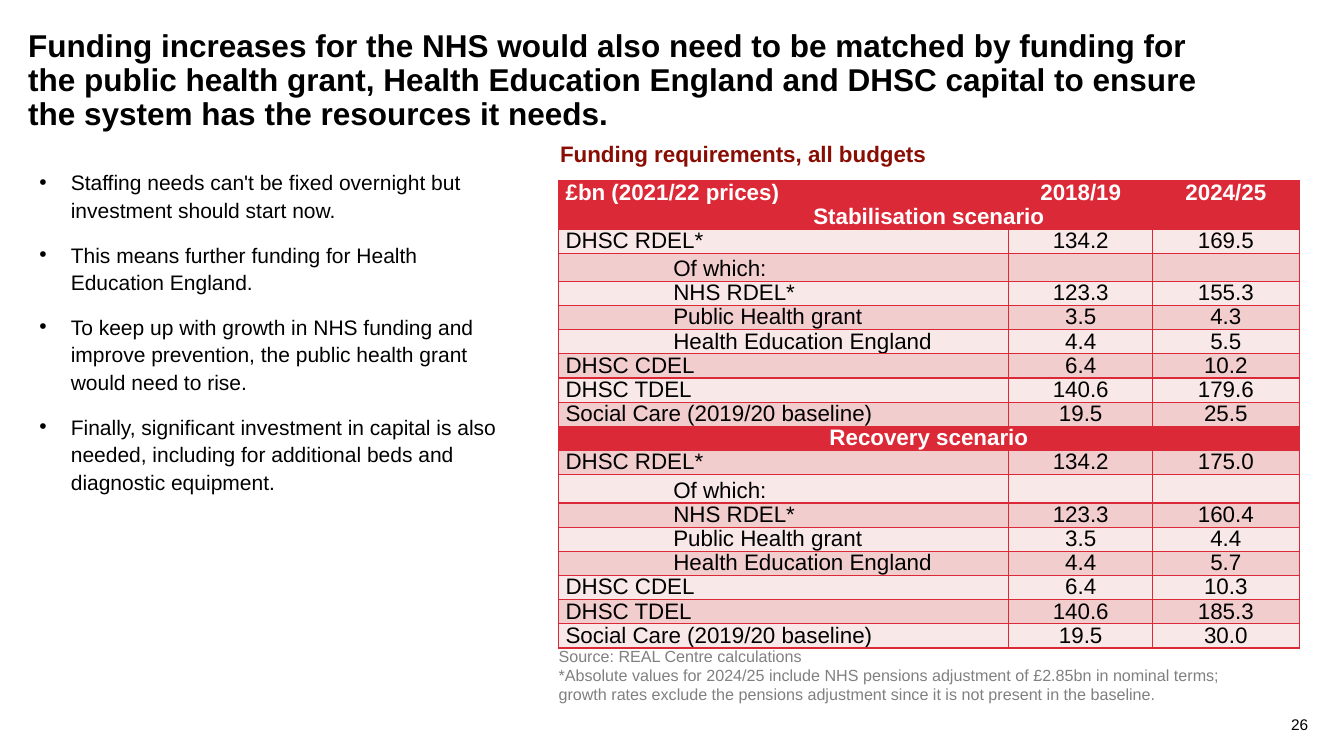
from lxml import etree
from pptx import Presentation
from pptx.dml.color import RGBColor
from pptx.enum.text import MSO_ANCHOR, MSO_AUTO_SIZE, PP_ALIGN
from pptx.oxml.ns import qn
from pptx.util import Pt

LEFT, CENTER, RIGHT = PP_ALIGN.LEFT, PP_ALIGN.CENTER, PP_ALIGN.RIGHT
TOP, BOTTOM = MSO_ANCHOR.TOP, MSO_ANCHOR.BOTTOM
NO_FIT = MSO_AUTO_SIZE.NONE

BLACK = RGBColor(0x00, 0x00, 0x00)
WHITE = RGBColor(0xFF, 0xFF, 0xFF)
RED = RGBColor(0xDC, 0x29, 0x37)
DARK_RED = RGBColor(0x89, 0x0D, 0x03)
LIGHT_PINK = RGBColor(0xF9, 0xE8, 0xE8)
PINK = RGBColor(0xF2, 0xCD, 0xCE)
GREY = RGBColor(0x80, 0x80, 0x80)

TITLE = ("Funding increases for the NHS would also need to be matched by funding for "
         "the public health grant, Health Education England and DHSC capital to ensure "
         "the system has the resources it needs.")
POINTS = [
    "Staffing needs can't be fixed overnight but investment should start now.",
    "This means further funding for Health Education England.",
    "To keep up with growth in NHS funding and improve prevention, the public health "
    "grant would need to rise.",
    "Finally, significant investment in capital is also needed, including for "
    "additional beds and diagnostic equipment.",
]
NOTES = [
    "Source: REAL Centre calculations",
    "*Absolute values for 2024/25 include NHS pensions adjustment of £2.85bn in nominal "
    "terms; growth rates exclude the pensions adjustment since it is not present in the "
    "baseline.",
]
HEADER = ("£bn (2021/22 prices)", "2018/19", "2024/25")
BUDGETS = [
    ("DHSC RDEL*", "134.2"),
    ("Of which:", ""),
    ("NHS RDEL*", "123.3"),
    ("Public Health grant", "3.5"),
    ("Health Education England", "4.4"),
    ("DHSC CDEL", "6.4"),
    ("DHSC TDEL", "140.6"),
    ("Social Care (2019/20 baseline)", "19.5"),
]
SUB_BUDGETS = {"Of which:", "NHS RDEL*", "Public Health grant", "Health Education England"}
SCENARIOS = {
    "Stabilisation scenario": ["169.5", "", "155.3", "4.3", "5.5", "10.2", "179.6", "25.5"],
    "Recovery scenario": ["175.0", "", "160.4", "4.4", "5.7", "10.3", "185.3", "30.0"],
}


def write(tf, lines, size=16, color=BLACK, bold=False, align=LEFT, spacing=None,
          after=0, indent=0, bullet=False):
    for i, line in enumerate(lines):
        p = tf.paragraphs[0] if i == 0 else tf.add_paragraph()
        p.alignment = align
        p.space_after = Pt(after)
        if spacing:
            p.line_spacing = spacing
        pPr = p._p.get_or_add_pPr()
        if indent:
            pPr.set("marL", str(Pt(indent)))
            pPr.set("indent", str(-Pt(indent) if bullet else 0))
        if bullet:
            etree.SubElement(pPr, qn("a:buFont"), typeface="Arial")
            etree.SubElement(pPr, qn("a:buChar"), char="•")
        r = p.add_run()
        r.text = line
        r.font.name = "Arial"
        r.font.size = Pt(size)
        r.font.bold = bold
        r.font.color.rgb = color


def set_frame(tf, inset_x=0, inset_y=0):
    tf.word_wrap = True
    tf.auto_size = NO_FIT
    tf.vertical_anchor = TOP
    tf.margin_left = tf.margin_right = Pt(inset_x)
    tf.margin_top = tf.margin_bottom = Pt(inset_y)


def add_text(s, box, lines, inset_x=0, inset_y=0, **fmt):
    tf = s.shapes.add_textbox(*map(Pt, box)).text_frame
    set_frame(tf, inset_x, inset_y)
    write(tf, lines, **fmt)


def add_title(s, box):
    sp = s.shapes.title
    sp.left, sp.top, sp.width, sp.height = map(Pt, box)
    set_frame(sp.text_frame)
    write(sp.text_frame, [TITLE], size=22.5, bold=True, spacing=0.9)


def format_cell(cell, fill):
    cell.margin_left = cell.margin_right = Pt(5)
    cell.margin_top = cell.margin_bottom = 0
    cell.vertical_anchor = BOTTOM
    tcPr = cell._tc.get_or_add_tcPr()
    for side in ("lnL", "lnR", "lnT", "lnB"):
        ln = etree.SubElement(tcPr, qn(f"a:{side}"), w=str(Pt(1)))
        solid = etree.SubElement(ln, qn("a:solidFill"))
        etree.SubElement(solid, qn("a:srgbClr"), val=str(RED))
    cell.fill.solid()
    cell.fill.fore_color.rgb = fill


def add_budget_table(s, box):
    rows = [HEADER]
    for scenario, totals in SCENARIOS.items():
        rows.append((scenario, "", ""))
        rows += [(name, base, total) for (name, base), total in zip(BUDGETS, totals)]
    table = s.shapes.add_table(len(rows), len(HEADER), *map(Pt, box)).table
    for column, share in zip(table.columns, (0.608, 0.194, 0.198)):
        column.width = Pt(round(box[2] * share, 2))
    for i, row in enumerate(rows):
        table.rows[i].height = Pt(round(box[3] / len(rows), 2))
        is_band = row[0] in SCENARIOS
        is_head = is_band or row is HEADER
        fill = RED if is_head else (PINK if i % 2 else LIGHT_PINK)
        for j, text in enumerate(row):
            cell = table.cell(i, j)
            format_cell(cell, fill)
            write(cell.text_frame, [text], color=WHITE if is_head else BLACK, bold=is_head,
                  align=CENTER if j or is_band else LEFT, spacing=Pt(13),
                  indent=77 if text in SUB_BUDGETS else 0)
        if is_band:
            table.cell(i, 0).merge(table.cell(i, len(HEADER) - 1))


def add_points(s, box):
    add_text(s, box, POINTS, inset_x=7.2, inset_y=3.6, size=15, spacing=1.1, after=12,
             indent=22.5, bullet=True)


def add_funding(s, box):
    x, y, w, h = box
    add_text(s, (x - 6, y, 454, 27), ["Funding requirements, all budgets"],
             inset_x=7.2, inset_y=3.6, color=DARK_RED, bold=True)
    add_budget_table(s, (x, y + 32.5, w, 328.3))
    add_text(s, (x, y + 365, 501, h - 365), NOTES, size=11.5, color=GREY)


def main():
    prs = Presentation()
    prs.slide_width, prs.slide_height = Pt(960), Pt(540)
    s = prs.slides.add_slide(prs.slide_layouts[5])
    add_title(s, (20, 21.6, 852.5, 48))
    add_points(s, (21, 116, 345, 242))
    add_funding(s, (399, 96.5, 529, 410))
    add_text(s, (906.5, 510.5, 28, 14.5), ["26"], size=11, align=RIGHT)
    prs.save("out.pptx")


if __name__ == "__main__":
    main()
